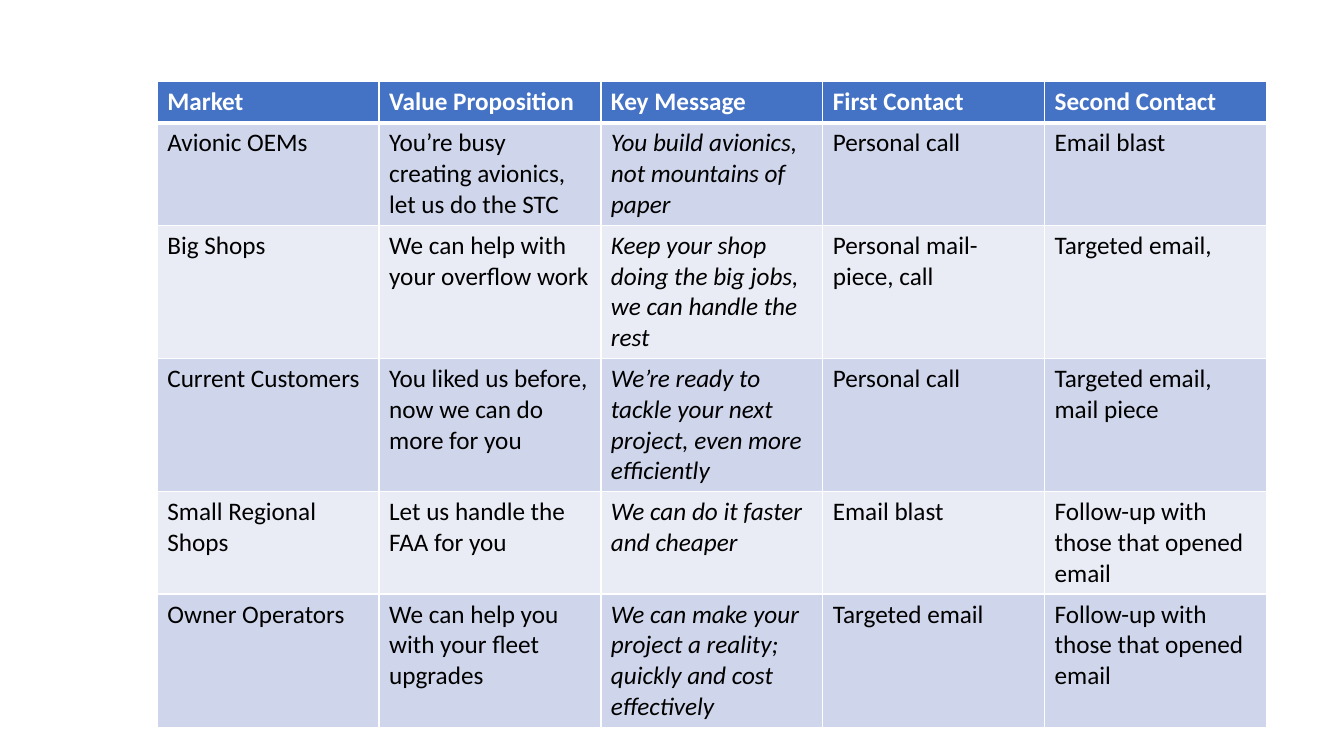
from lxml import etree
from pptx import Presentation
from pptx import util as u
from pptx.dml.color import RGBColor
from pptx.oxml.ns import qn

WHITE = RGBColor(0xFF, 0xFF, 0xFF)
BLACK = RGBColor(0x00, 0x00, 0x00)
BLUE = RGBColor(0x44, 0x72, 0xC4)
BANDS = [RGBColor(0xE9, 0xEB, 0xF5), RGBColor(0xCF, 0xD5, 0xEA)]

ROWS = [
    ["Market", "Value Proposition", "Key Message", "First Contact", "Second Contact"],
    ["Avionic OEMs", "You’re busy creating avionics, let us do the STC",
     "You build avionics, not mountains of paper", "Personal call", "Email blast"],
    ["Big Shops", "We can help with your overflow work",
     "Keep your shop doing the big jobs, we can handle the rest",
     "Personal mail-piece, call", "Targeted email,"],
    ["Current Customers", "You liked us before, now we can do more for you",
     "We’re ready to tackle your next project, even more efficiently",
     "Personal call", "Targeted email, mail piece"],
    ["Small Regional Shops", "Let us handle the FAA for you",
     "We can do it faster and cheaper", "Email blast",
     "Follow-up with those that opened email"],
    ["Owner Operators", "We can help you with your fleet upgrades",
     "We can make your project a reality; quickly and cost effectively",
     "Targeted email", "Follow-up with those that opened email"],
]
MESSAGE_COL = ROWS[0].index("Key Message")
COL_W, ROW_H = 2.2, 0.41


def add_border(cell, side, width):
    ln = etree.SubElement(cell._tc.get_or_add_tcPr(), qn("a:ln" + side),
                          w=str(u.Pt(width)))
    fill = etree.SubElement(ln, qn("a:solidFill"))
    etree.SubElement(fill, qn("a:srgbClr"), val=str(WHITE))


prs = Presentation()
prs.slide_width, prs.slide_height = u.Inches(13.33), u.Inches(7.5)
s = prs.slides.add_slide(prs.slide_layouts[6])

n_rows, n_cols = len(ROWS), len(ROWS[0])
# Rows start one line high and grow with their text
table = s.shapes.add_table(n_rows, n_cols, u.Inches(1.56), u.Inches(0.81),
                           u.Inches(n_cols * COL_W), u.Inches(n_rows * ROW_H)).table
for col in table.columns:
    col.width = u.Inches(COL_W)
for row in table.rows:
    row.height = u.Inches(ROW_H)

for i, row in enumerate(ROWS):
    header = i == 0
    for j, words in enumerate(row):
        cell = table.cell(i, j)
        for side in "LRTB":
            heavy = (header and side == "B") or (i == 1 and side == "T")
            add_border(cell, side, 3 if heavy else 1)
        cell.fill.solid()
        cell.fill.fore_color.rgb = BLUE if header else BANDS[i % 2]
        r = cell.text_frame.paragraphs[0].add_run()
        r.text = words
        r.font.name = "Calibri"
        r.font.size = u.Pt(18)
        r.font.bold = header
        r.font.italic = j == MESSAGE_COL and not header
        r.font.color.rgb = WHITE if header else BLACK

prs.save("out.pptx")
